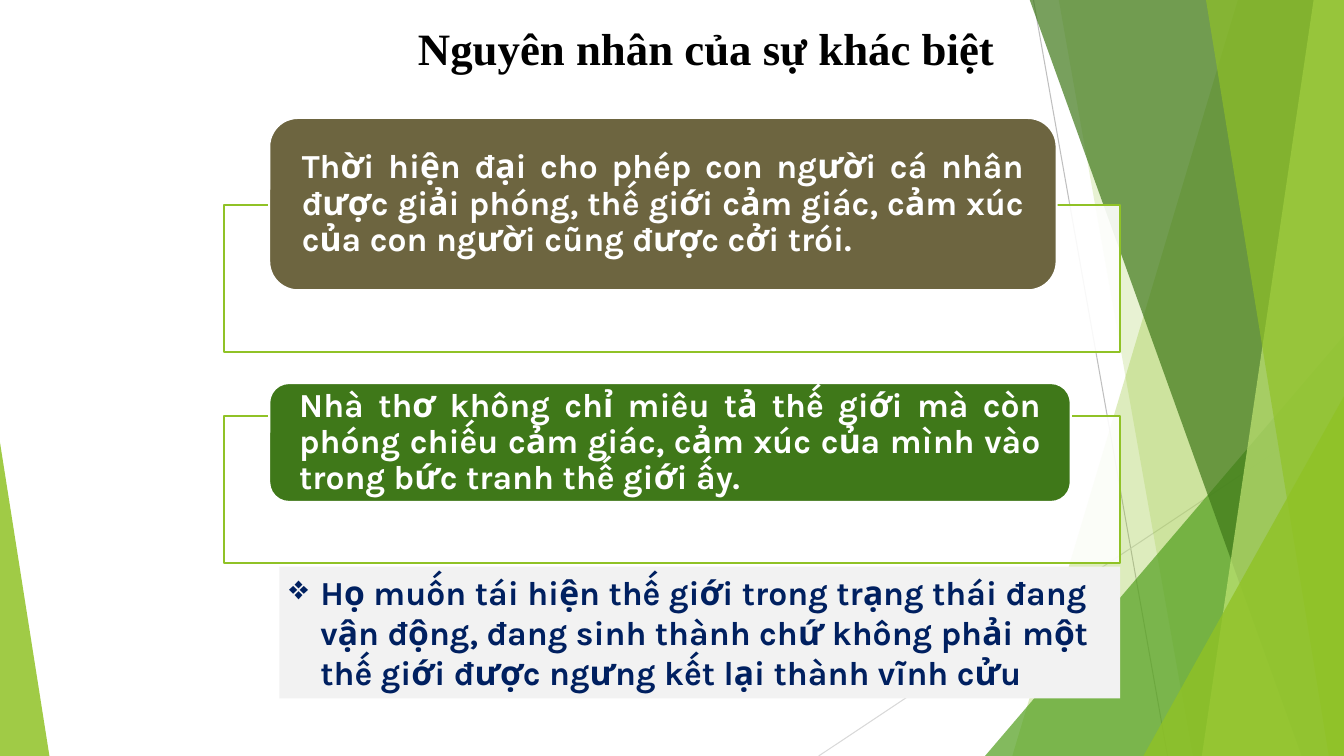
from lxml import etree
from pptx import Presentation
from pptx.dml.color import RGBColor
from pptx.enum.shapes import MSO_CONNECTOR, MSO_SHAPE
from pptx.enum.text import MSO_ANCHOR, PP_ALIGN
from pptx.oxml.ns import qn
from pptx.util import Inches, Pt

RECTANGLE = MSO_SHAPE.RECTANGLE
ROUNDED = MSO_SHAPE.ROUNDED_RECTANGLE
TRIANGLE = MSO_SHAPE.ISOSCELES_TRIANGLE
WIDTH, HEIGHT = 13.33, 7.5
GREEN, DARK_GREEN, WHITE = "90C226", "3F7819", "FFFFFF"


def style_shape(shape, fill, opacity=100, line=None):
    shape.shadow.inherit = False
    shape.fill.solid()
    shape.fill.fore_color.rgb = RGBColor.from_string(fill)
    if opacity < 100:
        color = shape.fill._xPr.find(qn("a:solidFill"))[0]
        etree.SubElement(color, qn("a:alpha"), val=str(opacity * 1000))
    if line:
        shape.line.color.rgb = RGBColor.from_string(line)
        shape.line.width = Pt(1.5)
    else:
        shape.line.fill.background()


def write_text(shape, text, size, font, color, align):
    shape.text_frame.word_wrap = True
    paragraph = shape.text_frame.paragraphs[0]
    paragraph.text = text
    paragraph.alignment = align
    paragraph.font.size = Pt(size)
    paragraph.font.name = font
    paragraph.font.bold = True
    paragraph.font.color.rgb = RGBColor.from_string(color)
    return paragraph


presentation = Presentation()
presentation.slide_width = Inches(WIDTH)
presentation.slide_height = Inches(HEIGHT)
slide = presentation.slides.add_slide(presentation.slide_layouts[6])
shapes = slide.shapes

# Thin background lines
for x1, y1, x2, y2, color in [
    (10.25, 0, 11.58, HEIGHT, "BFBFBF"),
    (WIDTH, 4.03, 8.12, HEIGHT, "D9D9D9"),
]:
    connector = shapes.add_connector(
        MSO_CONNECTOR.STRAIGHT, Inches(x1), Inches(y1), Inches(x2), Inches(y2))
    connector.line.color.rgb = RGBColor.from_string(color)
    connector.line.width = Pt(0.75)
    etree.SubElement(connector._element.spPr, qn("a:effectLst"))

# Green facets: bands run to the right edge, triangles stand on the bottom edge
facets = [
    ("band", (12.28, 10.04), GREEN, 30),
    ("band", (10.5, 11.83), GREEN, 20),
    ("triangle", (9.77, 3.33, 3.56, 1), "54A021", 72),
    ("band", (10.21, 12.91), DARK_GREEN, 70),
    ("band", (13.03, 11.92), "C0E474", 70),
    ("band", (11.96, 13.18), GREEN, 65),
    ("triangle", (11.34, 3.93, 1.99, 1), GREEN, 80),
    ("triangle", (0, 4.39, 0.49, 0), GREEN, 85),
]
for kind, geometry, color, opacity in facets:
    if kind == "band":
        top_x, bottom_x = geometry
        builder = shapes.build_freeform(Inches(top_x), Inches(-0.01))
        builder.add_line_segments([
            (Inches(WIDTH), Inches(-0.01)),
            (Inches(WIDTH), Inches(HEIGHT)),
            (Inches(bottom_x), Inches(HEIGHT)),
        ])
        facet = builder.convert_to_shape()
    else:
        left, top, width, apex = geometry
        facet = shapes.add_shape(
            TRIANGLE, Inches(left), Inches(top), Inches(width), Inches(HEIGHT - top))
        facet.adjustments[0] = apex
    style_shape(facet, color, opacity)

# Title
title = shapes.add_textbox(Inches(1.98), Inches(0.16), Inches(10.05), Inches(0.64))
write_text(title, "Nguyên nhân của sự khác biệt", 32, "Times New Roman",
           "000000", PP_ALIGN.CENTER)

# Two reasons, each a rounded label on an outlined frame
reasons = [
    (2.03, 1.17, 7.81, 1.71, "6D6540",
     "Thời hiện đại cho phép con người cá nhân được giải phóng, thế giới cảm "
     "giác, cảm xúc của con người cũng được cởi trói."),
    (4.13, 3.8, 7.95, 1.18, DARK_GREEN,
     "Nhà thơ không chỉ miêu tả thế giới mà còn phóng chiếu cảm giác, cảm xúc "
     "của mình vào trong bức tranh thế giới ấy."),
]
for frame_top, label_top, width, height, color, text in reasons:
    frame = shapes.add_shape(
        RECTANGLE, Inches(2.22), Inches(frame_top), Inches(8.89), Inches(1.46))
    style_shape(frame, WHITE, 90, GREEN)
    label = shapes.add_shape(
        ROUNDED, Inches(2.67), Inches(label_top), Inches(width), Inches(height))
    style_shape(label, color, line=WHITE)
    label.text_frame.margin_left = label.text_frame.margin_right = Inches(0.24)
    label.text_frame.margin_top = label.text_frame.margin_bottom = 0
    label.text_frame.vertical_anchor = MSO_ANCHOR.MIDDLE
    paragraph = write_text(label, text, 24, "Karla", WHITE, PP_ALIGN.JUSTIFY)
    paragraph.line_spacing = 0.9

# Conclusion with a diamond bullet
conclusion = shapes.add_shape(
    RECTANGLE, Inches(2.77), Inches(5.62), Inches(8.34), Inches(1.31))
style_shape(conclusion, "F2F2F2")
conclusion.text_frame.vertical_anchor = MSO_ANCHOR.TOP
paragraph = write_text(
    conclusion,
    "Họ muốn tái hiện thế giới trong trạng thái đang vận động, đang sinh thành "
    "chứ không phải một thế giới được ngưng kết lại thành vĩnh cửu",
    24, "Karla", "002060", PP_ALIGN.LEFT)
properties = paragraph._p.get_or_add_pPr()
properties.set("marL", str(Inches(0.31)))
properties.set("indent", str(Inches(-0.31)))
bullet = etree.Element(qn("a:buChar"), char="❖")
properties.insert(0, bullet)

presentation.save("out.pptx")
